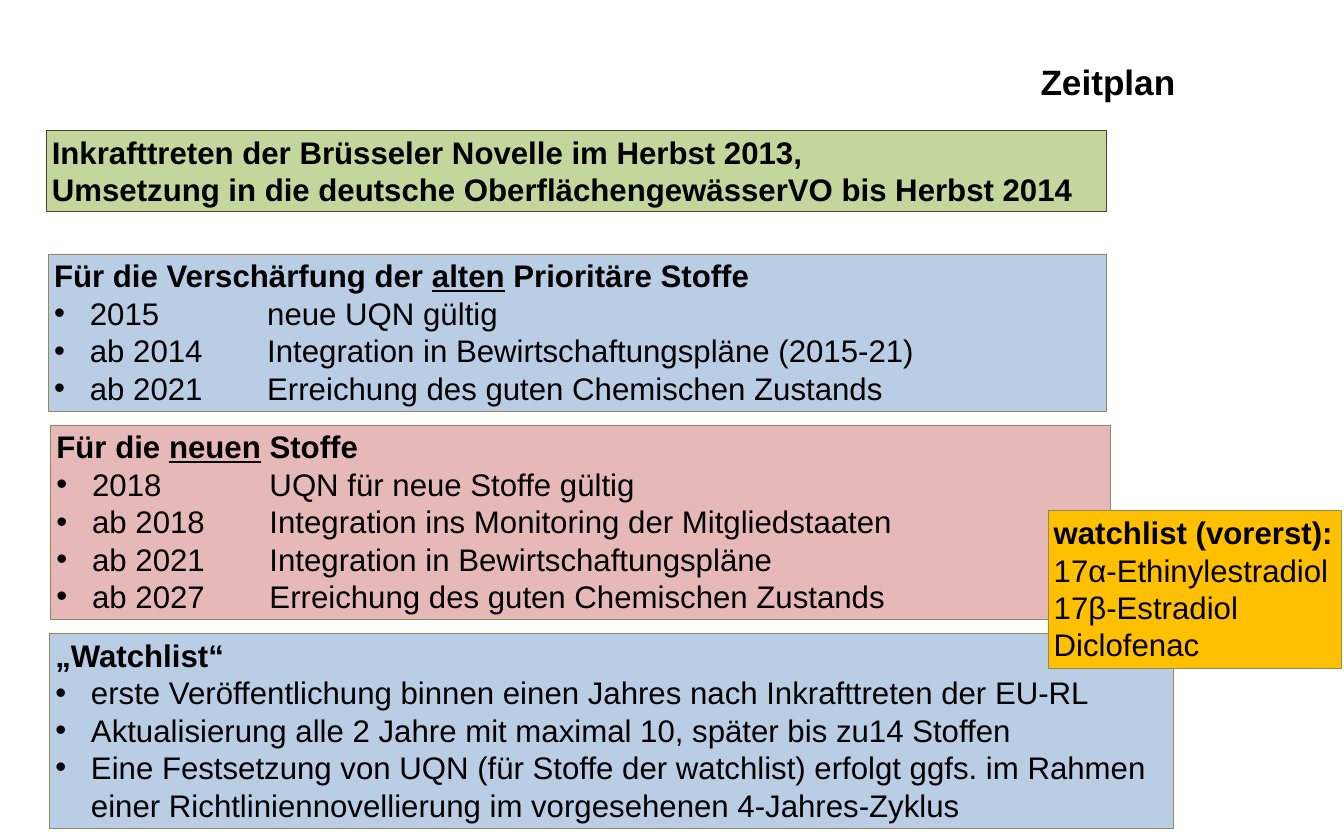
import pptx
import pptx.util
import pptx.dml.color
import pptx.enum.text
import pptx.oxml.ns
import lxml.etree
from dataclasses import dataclass

Inches = pptx.util.Inches
Pt = pptx.util.Pt
RGBColor = pptx.dml.color.RGBColor


@dataclass(frozen=True)
class Theme:
    font: str = "Arial"
    title_size: float = 44
    text_size: float = 39
    text: str = "000000"
    green: str = "C3D69B"
    blue: str = "B9CDE5"
    rose: str = "E6B9B8"
    amber: str = "FFC000"
    olive_line: str = "948A54"
    dark_line: str = "4A452A"
    line_width: float = 0.75
    indent: float = 0.62
    tab_size: float = 1.85


theme = Theme()


def format_paragraph(paragraph, size, bold, bullet=False, indent=0):
    properties = paragraph._p.get_or_add_pPr()
    properties.set("marL", str(Inches(indent)))
    properties.set("indent", str(Inches(-indent if bullet else 0)))
    properties.set("defTabSz", str(Inches(theme.tab_size)))
    tag = pptx.oxml.ns.qn("a:buChar" if bullet else "a:buNone")
    marker = lxml.etree.SubElement(properties, tag)
    if bullet:
        marker.set("char", "•")
    paragraph.alignment = pptx.enum.text.PP_ALIGN.LEFT
    paragraph.line_spacing = 1.0
    paragraph.space_before = Pt(0)
    paragraph.space_after = Pt(0)
    paragraph.font.name = theme.font
    paragraph.font.size = Pt(size)
    paragraph.font.bold = bold
    paragraph.font.color.rgb = RGBColor.from_string(theme.text)


def place(shape, left, top, width, height):
    shape.left, shape.top = Inches(left), Inches(top)
    shape.width, shape.height = Inches(width), Inches(height)
    frame = shape.text_frame
    frame.word_wrap = True
    frame.auto_size = pptx.enum.text.MSO_AUTO_SIZE.NONE
    frame.vertical_anchor = pptx.enum.text.MSO_ANCHOR.TOP
    frame.margin_left = frame.margin_right = Inches(0.1)
    frame.margin_top = frame.margin_bottom = Inches(0.05)
    return frame


presentation = pptx.Presentation()
presentation.slide_width = Inches(23.34)
presentation.slide_height = Inches(14.59)
comparison_layout = presentation.slide_layouts.get_by_name("Comparison")
slide = presentation.slides.add_slide(comparison_layout)

title_frame = place(slide.shapes.title, 17.97, 0.99, 4.33, 0.84)
title_frame.text = "Zeitplan"
format_paragraph(title_frame.paragraphs[0], theme.title_size, True)

new_substances, old_substances, watchlist, entry_into_force = list(slide.placeholders)[1:]
callout = slide.shapes.add_textbox(0, 0, 0, 0)

# Each line: kind, then its text; a heading's second part is underlined.
panels = [
    (new_substances, (0.88, 7.38, 18.41, 3.38), theme.rose, theme.olive_line, [
        ("heading", "Für die ", "neuen", " Stoffe"),
        ("bullet", "2018\t\tUQN für neue Stoffe gültig"),
        ("bullet", "ab 2018\tIntegration ins Monitoring der Mitgliedstaaten"),
        ("bullet", "ab 2021\tIntegration in Bewirtschaftungspläne"),
        ("bullet", "ab 2027\tErreichung des guten Chemischen Zustands"),
    ]),
    (old_substances, (0.84, 4.41, 18.38, 2.73), theme.blue, theme.olive_line, [
        ("heading", "Für die Verschärfung der ", "alten", " Prioritäre Stoffe"),
        ("bullet", "2015\t\tneue UQN gültig"),
        ("bullet", "ab 2014\tIntegration in Bewirtschaftungspläne (2015-21)"),
        ("bullet", "ab 2021\tErreichung des guten Chemischen Zustands"),
    ]),
    (watchlist, (0.86, 11, 19.52, 3.38), theme.blue, theme.olive_line, [
        ("heading", "„Watchlist“"),
        ("bullet", "erste Veröffentlichung binnen einen Jahres nach Inkrafttreten der EU-RL"),
        ("bullet", "Aktualisierung alle 2 Jahre mit maximal 10, später bis zu14 Stoffen"),
        ("bullet", "Eine Festsetzung von UQN (für Stoffe der watchlist) erfolgt ggfs. im Rahmen"),
        ("continuation", "einer Richtliniennovellierung im vorgesehenen 4-Jahres-Zyklus"),
    ]),
    (entry_into_force, (0.8, 2.26, 18.42, 1.41), theme.green, theme.dark_line, [
        ("heading", "Inkrafttreten der Brüsseler Novelle im Herbst 2013,"),
        ("heading", "Umsetzung in die deutsche OberflächengewässerVO bis Herbst 2014"),
    ]),
    (callout, (18.2, 8.87, 5.1, 2.73), theme.amber, theme.olive_line, [
        ("heading", "watchlist (vorerst):"),
        ("plain", "17α-Ethinylestradiol"),
        ("plain", "17β-Estradiol"),
        ("plain", "Diclofenac"),
    ]),
]

for shape, position, fill, line, lines in panels:
    frame = place(shape, *position)
    shape.fill.solid()
    shape.fill.fore_color.rgb = RGBColor.from_string(fill)
    shape.line.color.rgb = RGBColor.from_string(line)
    shape.line.width = Pt(theme.line_width)
    for number, (kind, *parts) in enumerate(lines):
        paragraph = frame.add_paragraph() if number else frame.paragraphs[0]
        indent = theme.indent if kind in ("bullet", "continuation") else 0
        format_paragraph(paragraph, theme.text_size, kind == "heading", kind == "bullet", indent)
        for part_number, text in enumerate(parts):
            run = paragraph.add_run()
            run.text = text
            if part_number == 1:
                run.font.underline = True

presentation.save("out.pptx")
